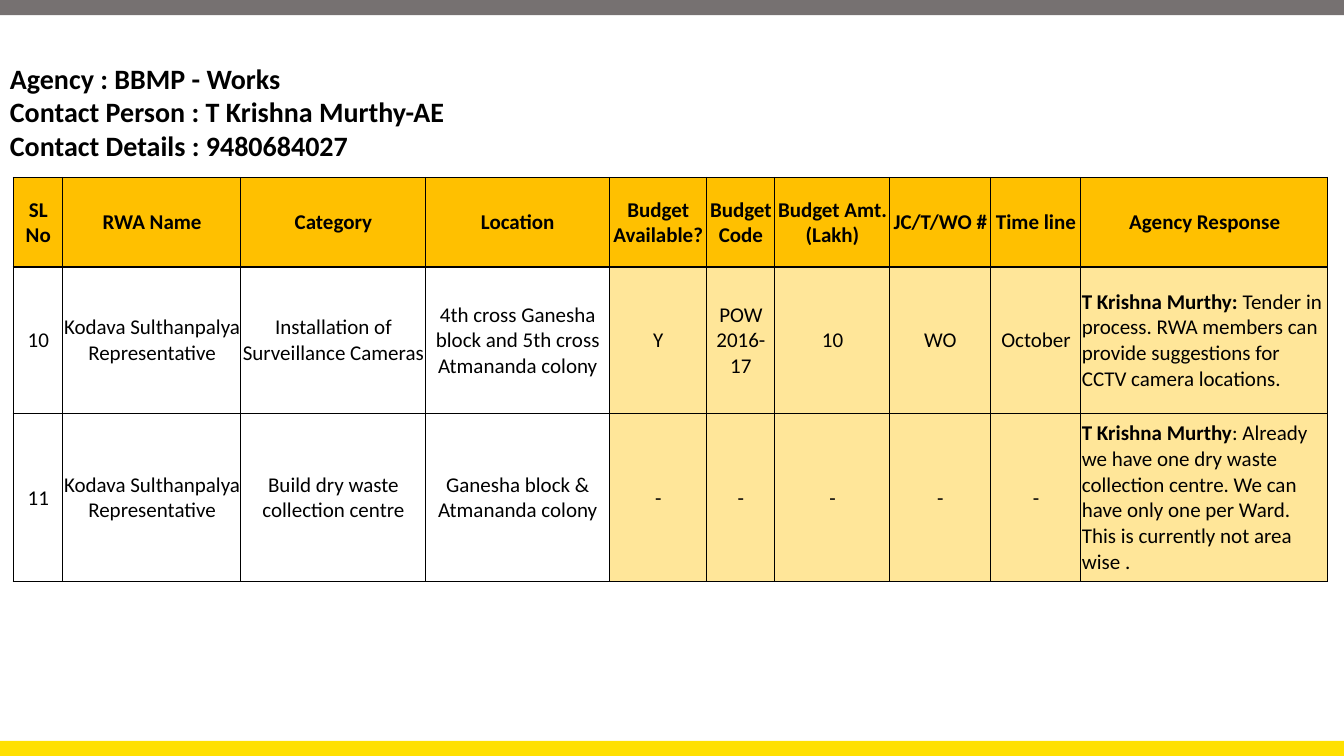
from lxml.etree import SubElement
from pptx import Presentation
from pptx.dml.color import RGBColor
from pptx.enum.shapes import MSO_SHAPE
from pptx.enum.text import MSO_ANCHOR, PP_ALIGN
from pptx.oxml.ns import qn
from pptx.util import Inches, Pt

WIDTH, HEIGHT = 13.33, 7.5
BAR = HEIGHT / 50
GREY, YELLOW, BLACK = "767171", "FFE000", "000000"
HEADER_FILL, AGENCY_FILL = "FFC000", "FFE699"

CONTACT = ["Agency : BBMP - Works",
           "Contact Person : T Krishna Murthy-AE",
           "Contact Details : 9480684027"]
COLUMNS = [("SL No", 0.49), ("RWA Name", 1.77), ("Category", 1.83),
           ("Location", 1.83), ("Budget Available?", 0.96),
           ("Budget Code", 0.68), ("Budget Amt. (Lakh)", 1.14),
           ("JC/T/WO #", 1), ("Time line", 0.9), ("Agency Response", 2.45)]
ROW_HEIGHTS = [0.89, 1.45, 1.67]
FIRST_AGENCY_COLUMN = 4
RESPONSE_COLUMN = len(COLUMNS) - 1
RWA = "Kodava Sulthanpalya Representative"
# A response is a pair: the bold speaker and the plain answer.
REQUESTS = [
    ["10", RWA, "Installation of Surveillance Cameras",
     "4th cross Ganesha block and 5th cross Atmananda colony",
     "Y", "POW\n2016-17", "10", "WO", "October",
     ("T Krishna Murthy: ", "Tender in process. RWA members can provide "
      "suggestions for CCTV camera locations.")],
    ["11", RWA, "Build dry waste collection centre",
     "Ganesha block & Atmananda colony", *["-"] * 5,
     ("T Krishna Murthy", ": Already we have one dry waste collection centre. "
      "We can have only one per Ward. This is currently not area wise .")],
]


def color(value):
    return RGBColor.from_string(value)


def add_span(para, text, size, bold):
    span = para.add_run()
    span.text = text
    span.font.name = "Calibri"
    span.font.size = Pt(size)
    span.font.bold = bold
    span.font.color.rgb = color(BLACK)


def add_paragraphs(frame, lines, size, bold, align):
    for index, line in enumerate(lines):
        para = frame.add_paragraph() if index else frame.paragraphs[0]
        para.alignment = align
        add_span(para, line, size, bold)


def add_bar(page, top, fill):
    bar = page.shapes.add_shape(MSO_SHAPE.RECTANGLE, 0, Inches(top),
                                Inches(WIDTH), Inches(BAR))
    bar.shadow.inherit = False
    bar.fill.solid()
    bar.fill.fore_color.rgb = color(fill)
    bar.line.fill.background()


def add_contact(page, left, top, width, height):
    box = page.shapes.add_textbox(*map(Inches, (left, top, width, height)))
    box.text_frame.word_wrap = True
    add_paragraphs(box.text_frame, CONTACT, 20, True, PP_ALIGN.LEFT)


def add_borders(cell):
    properties = cell._tc.get_or_add_tcPr()
    for side in ("lnL", "lnR", "lnT", "lnB"):
        line = SubElement(properties, qn(f"a:{side}"), w=str(Pt(1)))
        fill = SubElement(line, qn("a:solidFill"))
        SubElement(fill, qn("a:srgbClr"), val=BLACK)


def style_cell(cell, fill):
    cell.vertical_anchor = MSO_ANCHOR.MIDDLE
    cell.margin_left = cell.margin_top = Inches(0.01)
    cell.margin_right = cell.margin_bottom = 0
    add_borders(cell)
    if fill:
        cell.fill.solid()
        cell.fill.fore_color.rgb = color(fill)
    else:
        cell.fill.background()


def add_request_table(page, left, top, width, height):
    rows = [[name for name, _ in COLUMNS], *REQUESTS]
    table = page.shapes.add_table(
        len(rows), len(COLUMNS),
        *map(Inches, (left, top, width, height))).table
    table.first_row = table.horz_banding = False
    total = sum(share for _, share in COLUMNS)
    for column, (_, share) in zip(table.columns, COLUMNS):
        column.width = Inches(width * share / total)
    for row, share in zip(table.rows, ROW_HEIGHTS):
        row.height = Inches(height * share / sum(ROW_HEIGHTS))
    for row_index, values in enumerate(rows):
        header = row_index == 0
        for column_index, value in enumerate(values):
            cell = table.cell(row_index, column_index)
            agency = column_index >= FIRST_AGENCY_COLUMN
            style_cell(cell, HEADER_FILL if header
                       else AGENCY_FILL if agency else None)
            if column_index == RESPONSE_COLUMN and not header:
                para = cell.text_frame.paragraphs[0]
                para.alignment = PP_ALIGN.LEFT
                for text, bold in zip(value, (True, False)):
                    add_span(para, text, 15, bold)
            else:
                add_paragraphs(cell.text_frame, value.split("\n"), 15,
                               header, PP_ALIGN.CENTER)


def add_agency_page(deck):
    page = deck.slides.add_slide(deck.slide_layouts[6])
    add_bar(page, HEIGHT - BAR, YELLOW)
    add_bar(page, 0, GREY)
    add_contact(page, 0, 0.56, WIDTH, 1.1)
    add_request_table(page, 0.13, 1.76, 13.04, sum(ROW_HEIGHTS))


def main():
    deck = Presentation()
    deck.slide_width, deck.slide_height = Inches(WIDTH), Inches(HEIGHT)
    add_agency_page(deck)
    deck.save("out.pptx")


if __name__ == "__main__":
    main()
